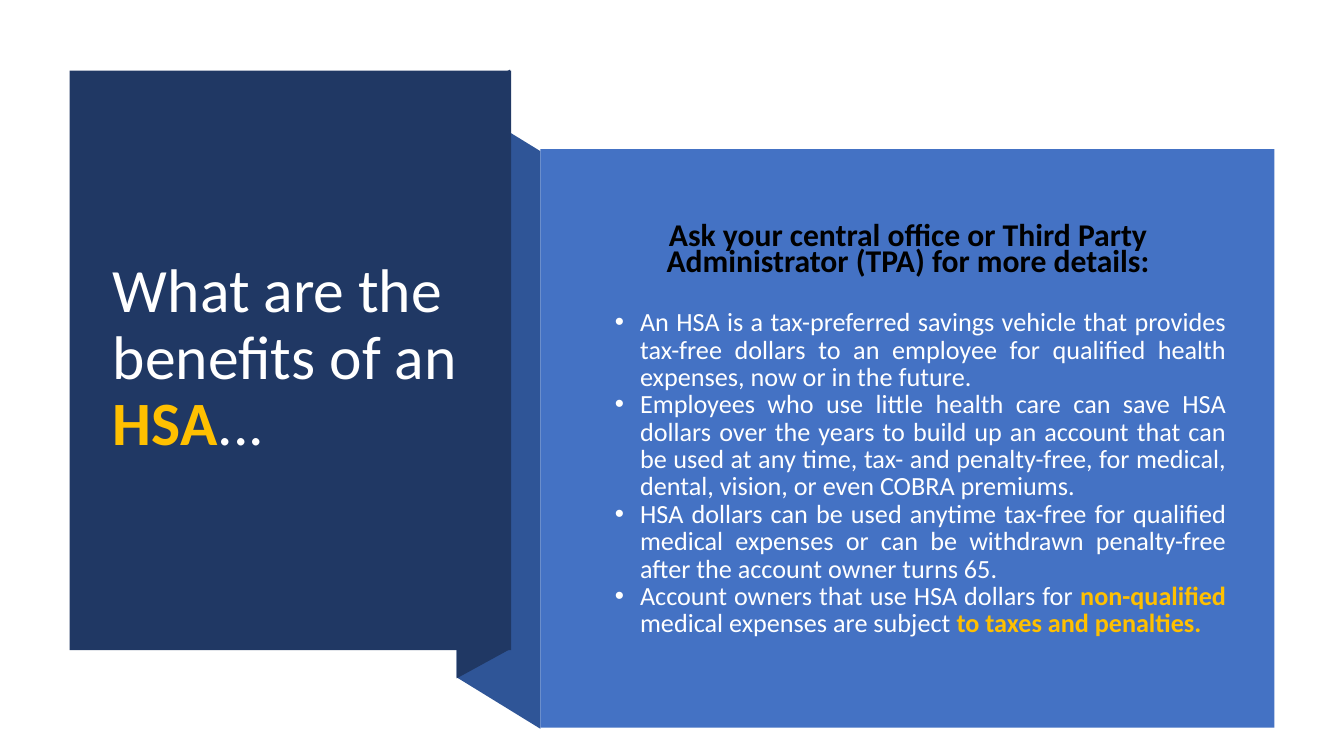
from dataclasses import dataclass

from lxml import etree
from pptx import Presentation
from pptx.dml.color import RGBColor
from pptx.enum.shapes import MSO_SHAPE
from pptx.enum.text import MSO_ANCHOR, MSO_AUTO_SIZE, PP_ALIGN
from pptx.oxml.ns import qn
from pptx.util import Inches, Pt

RECTANGLE = MSO_SHAPE.RECTANGLE
TOP, MIDDLE = MSO_ANCHOR.TOP, MSO_ANCHOR.MIDDLE
LEFT, CENTER, JUSTIFY = PP_ALIGN.LEFT, PP_ALIGN.CENTER, PP_ALIGN.JUSTIFY
NO_AUTOFIT = MSO_AUTO_SIZE.NONE
TITLE_ONLY = 5


@dataclass(frozen=True)
class Theme:
    font: str = "Calibri"
    navy: str = "203864"
    fold: str = "2F5597"
    blue: str = "4472C4"
    gold: str = "FFC000"
    white: str = "FFFFFF"
    black: str = "000000"
    title_size: float = 44
    heading_size: float = 22.6
    body_size: float = 18.7


TITLE = [("What are the benefits of an ", False), ("HSA", True), ("...", False)]
HEADING = "Ask your central office or Third Party Administrator (TPA) for more details:"
# Each bullet is a list of (text, highlighted) spans.
BULLETS = [
    [("An HSA is a tax-preferred savings vehicle that provides tax-free dollars "
      "to an employee for qualified health expenses, now or in the future.", False)],
    [("Employees who use little health care can save HSA dollars over the years "
      "to build up an account that can be used at any time, tax- and penalty-free, "
      "for medical, dental, vision, or even COBRA premiums.", False)],
    [("HSA dollars can be used anytime tax-free for qualified medical expenses "
      "or can be withdrawn penalty-free after the account owner turns 65.", False)],
    [("Account owners that use HSA dollars for ", False), ("non-qualified", True),
     (" medical expenses are subject ", False), ("to taxes and penalties.", True)],
]


def add_span(para, text, *, font, size, color, bold=False):
    span = para.add_run()
    span.text = text
    span.font.name = font
    span.font.size = Pt(size)
    span.font.bold = bold
    span.font.color.rgb = RGBColor.from_string(color)


def format_para(para, align, line_spacing, after=0):
    para.alignment = align
    para.line_spacing = line_spacing
    para.space_before = Pt(0)
    para.space_after = Pt(after)


def add_bullet(para):
    properties = para._p.get_or_add_pPr()
    properties.set("marL", str(Inches(0.5)))
    properties.set("indent", str(Inches(-0.25)))
    etree.SubElement(properties, qn("a:buFont")).set("typeface", "Arial")
    etree.SubElement(properties, qn("a:buChar")).set("char", "•")


class SlideBuilder:
    def __init__(self, slide, theme):
        self.slide = slide
        self.theme = theme

    def paint(self, shape, color):
        shape.shadow.inherit = False
        shape.fill.solid()
        shape.fill.fore_color.rgb = RGBColor.from_string(color)
        shape.line.fill.background()

    def panel(self, left, top, width, height, color):
        box = self.slide.shapes.add_shape(
            RECTANGLE, Inches(left), Inches(top), Inches(width), Inches(height))
        self.paint(box, color)

    def polygon(self, points, color):
        start, *others = [(Inches(x), Inches(y)) for x, y in points]
        builder = self.slide.shapes.build_freeform(*start)
        builder.add_line_segments(others, close=True)
        self.paint(builder.convert_to_shape(), color)

    def spans(self, para, parts, size):
        """Write (text, highlighted) parts, with highlights in bold gold."""
        for text, highlighted in parts:
            color = self.theme.gold if highlighted else self.theme.white
            add_span(para, text, font=self.theme.font, size=size,
                     color=color, bold=highlighted)

    def title(self, parts, left, top, width, height):
        box = self.slide.shapes.title
        box.left, box.top = Inches(left), Inches(top)
        box.width, box.height = Inches(width), Inches(height)
        box.element.getparent().append(box.element)  # bring in front of the panels
        frame = box.text_frame
        frame.word_wrap = True
        frame.auto_size = NO_AUTOFIT
        frame.vertical_anchor = MIDDLE
        para = frame.paragraphs[0]
        format_para(para, LEFT, 0.9)
        self.spans(para, parts, self.theme.title_size)

    def body(self, heading, bullets, left, top, width, height):
        box = self.slide.shapes.add_textbox(
            Inches(left), Inches(top), Inches(width), Inches(height))
        frame = box.text_frame
        frame.word_wrap = True
        frame.vertical_anchor = TOP
        frame.margin_top = Inches(0.18)
        para = frame.paragraphs[0]
        format_para(para, CENTER, 0.7, after=23)
        add_span(para, heading, font=self.theme.font, size=self.theme.heading_size,
                 color=self.theme.black, bold=True)
        for parts in bullets:
            para = frame.add_paragraph()
            format_para(para, JUSTIFY, 0.87)
            add_bullet(para)
            self.spans(para, parts, self.theme.body_size)


def main():
    deck = Presentation()
    deck.slide_width, deck.slide_height = Inches(13.33), Inches(7.5)
    theme = Theme()
    page = SlideBuilder(deck.slides.add_slide(deck.slide_layouts[TITLE_ONLY]), theme)

    page.polygon([(5.36, 7.23), (4.53, 6.72), (4.53, 0.99), (5.36, 1.5)], theme.fold)
    page.polygon([(5.06, 6.44), (4.53, 6.73), (4.53, 0.98), (5.06, 0.69)], theme.navy)
    page.panel(0.69, 0.7, 4.38, 5.75, theme.navy)
    page.title(TITLE, 1.02, 1.07, 3.71, 4.99)
    page.panel(5.36, 1.48, 7.28, 5.74, theme.blue)
    page.body(HEADING, BULLETS, 5.75, 2.05, 6.51, 5.18)

    deck.save("out.pptx")


if __name__ == "__main__":
    main()
